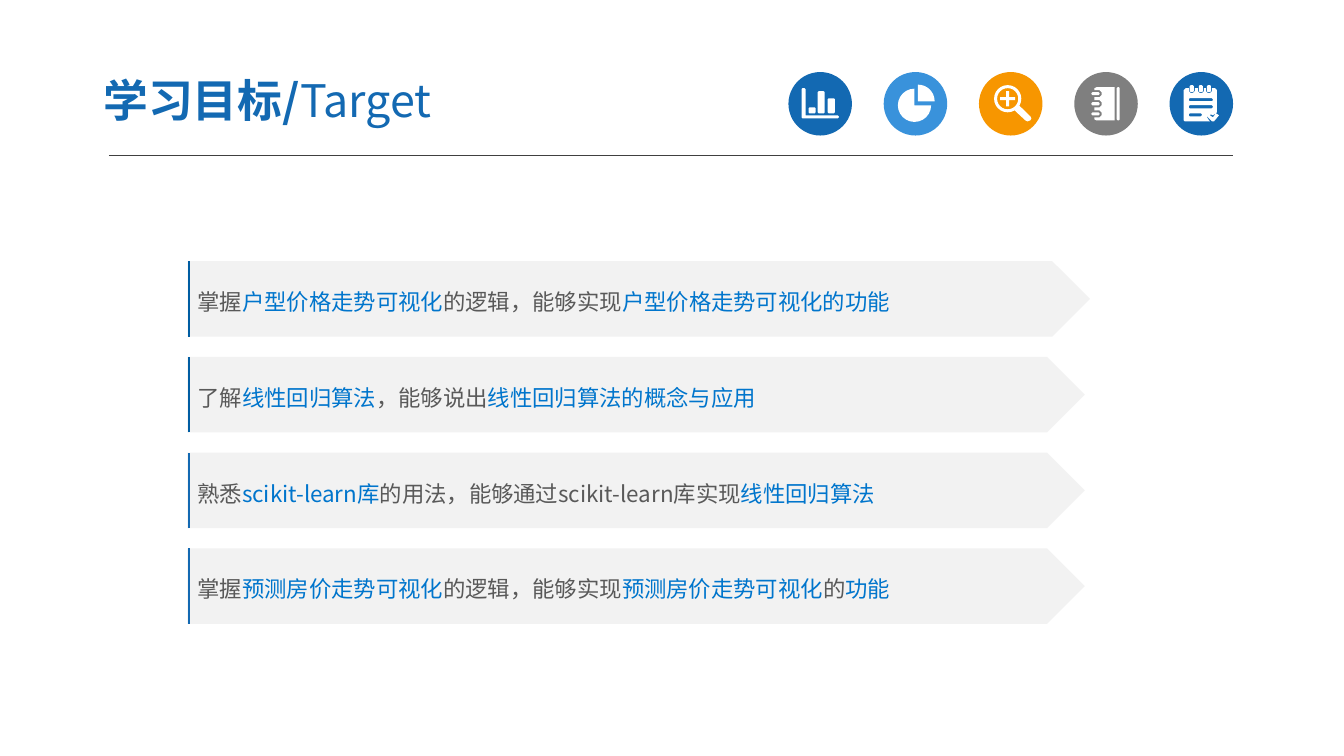
from math import cos, radians, sin

from lxml.etree import SubElement
from pptx import Presentation
from pptx.dml.color import RGBColor
from pptx.enum.shapes import MSO_CONNECTOR as Connector, MSO_SHAPE as Shape
from pptx.enum.text import MSO_ANCHOR as Anchor, MSO_AUTO_SIZE as AutoSize, PP_ALIGN as Align
from pptx.oxml.ns import qn
from pptx.util import Inches, Pt

WHITE = RGBColor(0xFF, 0xFF, 0xFF)
BLUE = RGBColor(0x13, 0x69, 0xB2)
SKY = RGBColor(0x39, 0x92, 0xDB)
ORANGE = RGBColor(0xF7, 0x96, 0x00)
GRAY = RGBColor(0x7F, 0x7F, 0x7F)
RULE = RGBColor(0x40, 0x40, 0x40)
EDGE = RGBColor(0x00, 0x5D, 0xA2)
PANEL = RGBColor(0xF2, 0xF2, 0xF2)
BODY = RGBColor(0x59, 0x59, 0x59)
KEYWORD = RGBColor(0x00, 0x75, 0xCC)

FONT = "Noto Sans CJK SC"
CELL = Inches(0.01)
ICON_TOP, ICON_LEFT, ICON_STEP, ICON_SIZE = 71.5, 782, 94.5, 63
GOAL_TOP, GOAL_LEFT, GOAL_STEP, GOAL_HEIGHT = 259, 186, 95, 75

GOALS = [
    (895, EDGE, ["掌握", "户型价格走势可视化", "的逻辑，能够实现", "户型价格走势可视化的功能"]),
    (890, EDGE, ["了解", "线性回归算法", "，能够说出", "线性回归算法的概念与应用"]),
    (890, BLUE, ["熟悉", "scikit-learn库", "的用法，能够通过scikit-learn库实现", "线性回归算法"]),
    (890, BLUE, ["掌握", "预测房价走势可视化", "的逻辑，能够实现", "预测房价走势可视化", "的", "功能"]),
]


def cells(*counts):
    return [round(count * CELL) for count in counts]


def paint(shape, color):
    shape.shadow.inherit = False
    shape.fill.solid()
    shape.fill.fore_color.rgb = color
    shape.line.fill.background()


def add_filled(shapes, kind, place, color):
    shape = shapes.add_shape(kind, *cells(*place))
    paint(shape, color)
    return shape


def add_line(page, ends, color, width):
    line = page.shapes.add_connector(Connector.STRAIGHT, *cells(*ends))
    line.line.color.rgb = color
    line.line.width = Pt(width)
    SubElement(line.element.spPr, qn("a:effectLst"))


def add_span(para, text, size, color, bold=False):
    span = para.add_run()
    span.text = text
    span.font.size = Pt(size)
    span.font.bold = bold
    span.font.color.rgb = color
    span.font.name = FONT
    SubElement(span.font._element, qn("a:ea")).set("typeface", FONT)


def add_title(page):
    title = page.shapes.title
    title.left, title.top, title.width, title.height = cells(89.5, 63, 522, 72)
    frame = title.text_frame
    frame.word_wrap = True
    frame.auto_size = AutoSize.NONE
    frame.vertical_anchor = Anchor.MIDDLE
    frame.margin_left = frame.margin_right = Inches(0.13)
    frame.margin_top = frame.margin_bottom = Inches(0.07)
    para = frame.paragraphs[0]
    para.alignment = Align.LEFT
    add_span(para, "学习目标/", 32, BLUE, True)
    add_span(para, "Target", 32, BLUE)


def add_goal(page, row, width, edge, texts):
    top = GOAL_TOP + row * GOAL_STEP
    box = add_filled(page.shapes, Shape.PENTAGON, (GOAL_LEFT, top, width, GOAL_HEIGHT), PANEL)
    box.text_frame.word_wrap = True
    box.text_frame.vertical_anchor = Anchor.MIDDLE
    para = box.text_frame.paragraphs[0]
    para.alignment = Align.LEFT
    para.line_spacing = 1.2
    for index, text in enumerate(texts):
        add_span(para, text, 16, KEYWORD if index % 2 else BODY)
    add_line(page, (GOAL_LEFT + 1.5, top + GOAL_HEIGHT, GOAL_LEFT + 1.5, top), edge, 1.5)


def bar(x, y, width, height):
    right, bottom = x + width, y + height
    return [(x + 1, y), (right - 1, y), (right, y + 1), (right, bottom - 1),
            (right - 1, bottom), (x + 1, bottom), (x, bottom - 1), (x, y + 1)]


def arc(x, y, radius, start=0, sweep=360, steps=24):
    angles = [radians(start + sweep * step / steps) for step in range(steps + 1)]
    return [(x + radius * cos(angle), y + radius * sin(angle)) for angle in angles]


def chart_outlines():
    axes = [(13, 17), (14, 16), (16, 16), (17, 17), (17, 43), (49, 43), (50, 44),
            (50, 45), (49, 46), (14, 46), (13, 45)]
    return [axes] + [bar(x, y, 7, 41 - y) for x, y in [(20, 35), (29, 19), (39, 26)]]


def pie_outlines():
    return [[(34, 29)] + arc(34, 29, 16.5, 270, 90, 8),
            [(30.5, 33)] + arc(30.5, 33, 16.5, 0, 270, 18)]


def magnifier_outlines():
    plus = [(27, 19), (30, 19), (30, 25), (36, 25), (36, 28), (30, 28),
            (30, 34), (27, 34), (27, 28), (21, 28), (21, 25), (27, 25)]
    handle = [(35.6, 38.3), (40.3, 33.6), (51, 44), (52, 46), (51, 48), (48, 49), (46, 48)]
    return [arc(28.5, 26.5, 13.5), arc(28.5, 26.5, 10.5), plus, handle]


def notebook_outlines():
    rings = (20, 30, 40)
    page = [(40, 48), (40, 15), (22, 15), (20, 16)]
    for y in rings:
        page += [(20, y - 2), (25, y - 2), (27, y), (27, y + 3), (25, y + 5), (20, y + 5)]
    return [page + [(20, 47), (22, 48)], bar(42, 15, 3, 33)] + [bar(17, y, 8, 3) for y in rings]


def notepad_outlines():
    rings = (20, 29, 37)
    page = [(14, 48), (14, 18), (16, 16)]
    for x in rings:
        page += [(x - 1, 16), (x - 1, 19), (x + 1, 21), (x + 3, 21), (x + 5, 19), (x + 5, 16)]
    page += [(45, 16), (47, 18), (47, 40), (43, 43), (41, 42), (37, 45), (40, 49), (15, 49)]
    tick = [(38, 45), (40, 43), (43, 45), (46, 41), (49, 43), (44, 49), (42, 49)]
    lines = [bar(19, y, width, 3) for y, width in [(26, 24), (33, 24), (41, 13)]]
    return [page, tick] + lines + [bar(x, 13, 4, 7) for x in rings]


def add_icon(page, column, color, outlines):
    left = ICON_LEFT + column * ICON_STEP
    shapes = page.shapes.add_group_shape().shapes
    add_filled(shapes, Shape.OVAL, (left, ICON_TOP, ICON_SIZE, ICON_SIZE), color)
    placed = [cells_of_outline(outline, left) for outline in outlines]
    builder = shapes.build_freeform(*placed[0][0])
    for index, points in enumerate(placed):
        if index:
            builder.move_to(*points[0])
        builder.add_line_segments(points[1:], close=True)
    paint(builder.convert_to_shape(), WHITE)


def cells_of_outline(outline, left):
    return [cells(left + x, ICON_TOP + y) for x, y in outline]


def main():
    deck = Presentation()
    deck.slide_width, deck.slide_height = Inches(13.33), Inches(7.5)
    page = deck.slides.add_slide(deck.slide_layouts[5])
    add_line(page, (108, 154.5, 1223, 154.5), RULE, 0.75)
    icons = [(BLUE, chart_outlines()), (SKY, pie_outlines()), (ORANGE, magnifier_outlines()),
             (GRAY, notebook_outlines()), (BLUE, notepad_outlines())]
    for column, (color, outlines) in enumerate(icons):
        add_icon(page, column, color, outlines)
    add_title(page)
    for row, goal in enumerate(GOALS):
        add_goal(page, row, *goal)
    deck.save("out.pptx")


if __name__ == "__main__":
    main()
